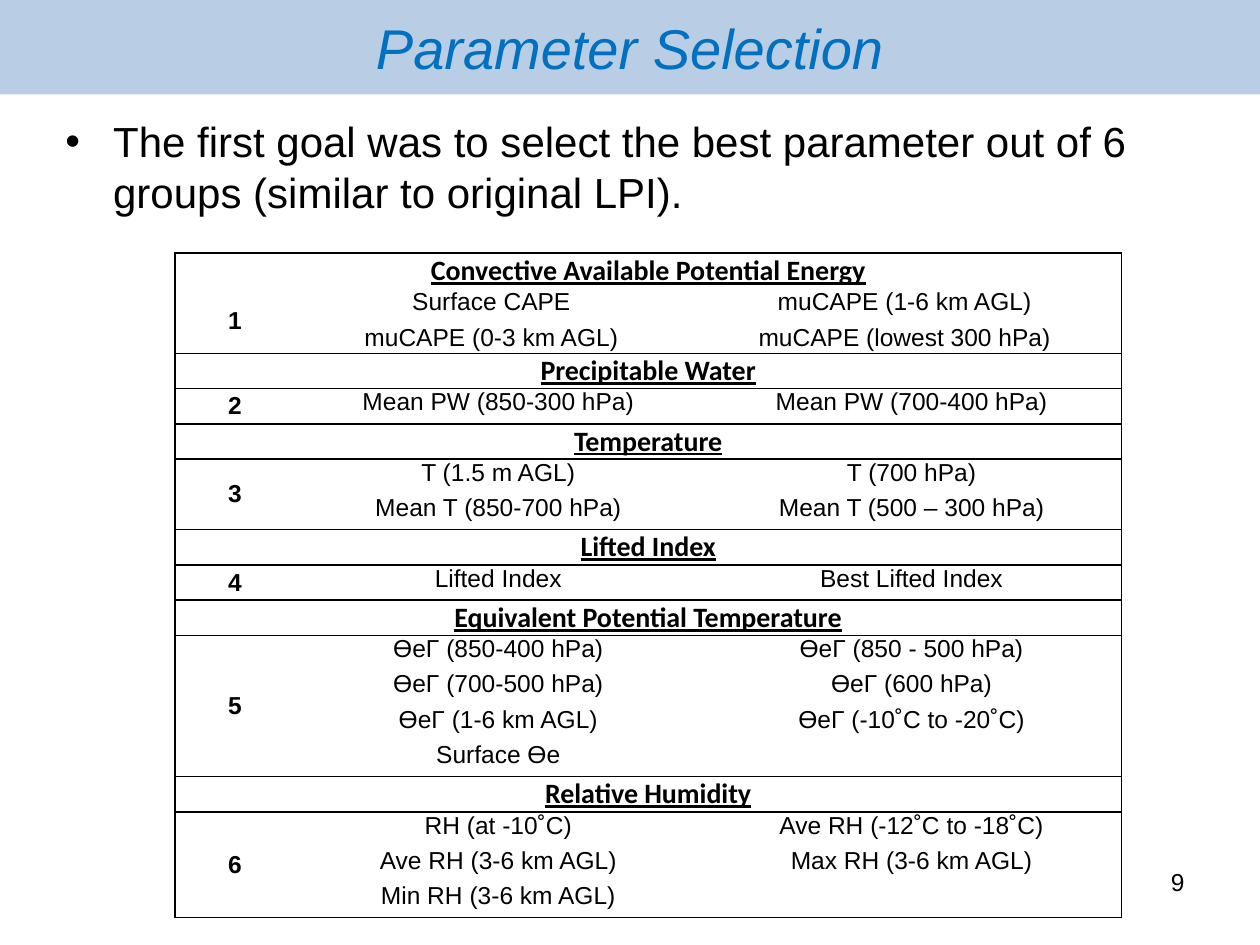
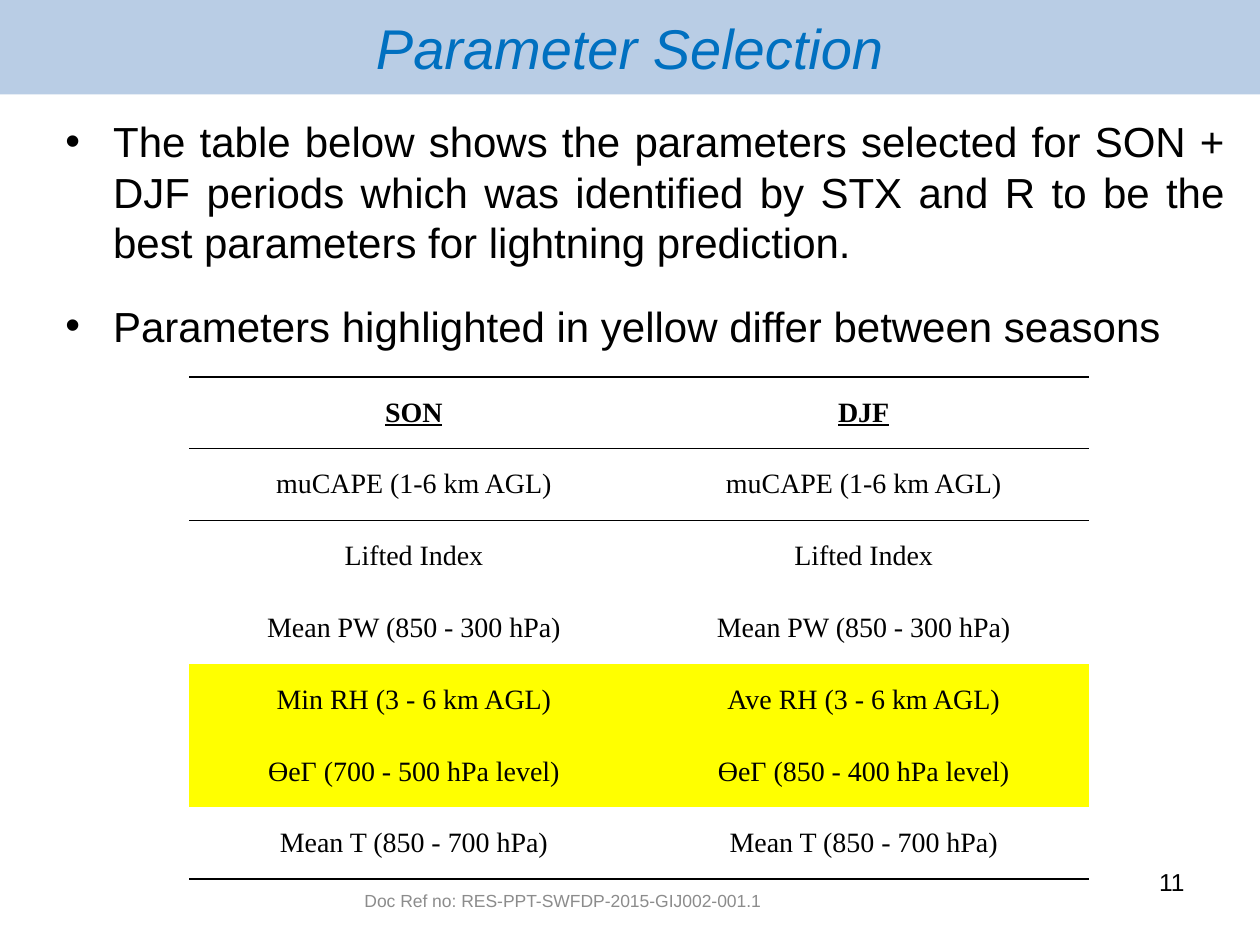
from lxml.etree import SubElement
from pptx import Presentation
from pptx.dml.color import RGBColor as RGB
from pptx.enum.shapes import MSO_SHAPE as SHAPE
from pptx.enum.text import MSO_ANCHOR as ANCHOR, PP_ALIGN as ALIGN
from pptx.oxml.ns import qn
from pptx.util import Inches, Pt

# Content
TITLE = "Parameter Selection"
GOAL = ["The first goal was to select the best parameter out of 6 groups "
        "(similar to original LPI)."]
GROUPS = [
    ("Convective Available Potential Energy", [
        ("Surface CAPE", "muCAPE (1-6 km AGL)"),
        ("muCAPE (0-3 km AGL)", "muCAPE (lowest 300 hPa)")]),
    ("Precipitable Water", [
        ("Mean PW (850-300 hPa)", "Mean PW (700-400 hPa)")]),
    ("Temperature", [
        ("T (1.5 m AGL)", "T (700 hPa)"),
        ("Mean T (850-700 hPa)", "Mean T (500 – 300 hPa)")]),
    ("Lifted Index", [
        ("Lifted Index", "Best Lifted Index")]),
    ("Equivalent Potential Temperature", [
        ("ƟeΓ (850-400 hPa)", "ƟeΓ (850 - 500 hPa)"),
        ("ƟeΓ (700-500 hPa)", "ƟeΓ (600 hPa)"),
        ("ƟeΓ (1-6 km AGL)", "ƟeΓ (-10˚C to -20˚C)"),
        ("Surface Ɵe", "")]),
    ("Relative Humidity", [
        ("RH (at -10˚C)", "Ave RH (-12˚C to -18˚C)"),
        ("Ave RH (3-6 km AGL)", "Max RH (3-6 km AGL)"),
        ("Min RH (3-6 km AGL)", "")]),
]
FINDINGS = [
    "The table below shows the parameters selected for SON + DJF periods which was "
    "identified by STX and R to be the best parameters for lightning prediction.",
    "Parameters highlighted in yellow differ between seasons",
]
SEASONS = [
    ("SON", "DJF"),
    ("muCAPE (1-6 km AGL)", "muCAPE (1-6 km AGL)"),
    ("Lifted Index", "Lifted Index"),
    ("Mean PW (850 - 300 hPa)", "Mean PW (850 - 300 hPa)"),
    ("Min RH (3 - 6 km AGL)", "Ave RH (3 - 6 km AGL)"),
    ("ƟeΓ (700 - 500 hPa level)", "ƟeΓ (850 - 400 hPa level)"),
    ("Mean T (850 - 700 hPa)", "Mean T (850 - 700 hPa)"),
]
DOC_REF = "Doc Ref no: RES-PPT-SWFDP-2015-GIJ002-001.1"

# Shared look
COLORS = {"band": "B9CDE5", "title": "0070C0", "text": "000000",
          "footer": "8C8C8C", "paper": "FFFFFF", "highlight": "FFFF00"}
NO_GRID_STYLE = "{2D5ABB26-0587-4C30-8999-92F81FD0307C}"
WIDTH, HEIGHT = 10, 7.5
BULLET_MARGIN, BULLET_HANG = 0.62, 0.38


def color(name):
    return RGB.from_string(COLORS[name])


def format_runs(paragraph, size, ink="text", font="Arial", align=ALIGN.CENTER,
                bold=False, italic=False, underline=False):
    paragraph.alignment = align
    for run in paragraph.runs:
        face = run.font
        face.name, face.size, face.color.rgb = font, Pt(size), color(ink)
        face.bold, face.italic, face.underline = bold, italic, underline


def add_label(slide, text, box, size, anchor=ANCHOR.TOP, **look):
    label = slide.shapes.add_textbox(*map(Inches, box)).text_frame
    label.word_wrap, label.vertical_anchor = True, anchor
    label.text = text
    format_runs(label.paragraphs[0], size, **look)


def add_bullets(slide, points, align):
    body = slide.shapes.add_textbox(*map(Inches, (0.18, 0.87, 9.64, 6.08))).text_frame
    body.word_wrap = True
    body.text = "\n".join(points)
    for i, point in enumerate(body.paragraphs):
        props = point._p.get_or_add_pPr()
        props.set("marL", str(Inches(BULLET_MARGIN)))
        props.set("indent", str(-Inches(BULLET_HANG)))
        SubElement(props, qn("a:buFont"), typeface="Arial")
        SubElement(props, qn("a:buChar"), char="•")
        if i:
            point.space_before = Pt(19)
        format_runs(point, 24, align=align)


def start_slide(deck, points, number, align=ALIGN.LEFT):
    slide = deck.slides.add_slide(deck.slide_layouts[6])
    band = slide.shapes.add_shape(SHAPE.RECTANGLE, 0, 0, Inches(WIDTH), Inches(HEIGHT / 10))
    band.shadow.inherit = False
    band.fill.solid()
    band.fill.fore_color.rgb = color("band")
    band.line.fill.background()
    band.text_frame.text = TITLE
    band.text_frame.vertical_anchor = ANCHOR.MIDDLE
    format_runs(band.text_frame.paragraphs[0], 32, "title", italic=True)
    add_bullets(slide, points, align)
    add_label(slide, str(number), (7.17, 6.83, 2.33, 0.52), 14, align=ALIGN.RIGHT)
    return slide


# Tables
def add_plain_table(slide, left, top, widths, heights):
    table = slide.shapes.add_table(
        len(heights), len(widths), Inches(left), Inches(top),
        Inches(sum(widths)), Inches(sum(heights))).table
    table.first_row = table.horz_banding = False
    table._tbl.tblPr.find(qn("a:tableStyleId")).text = NO_GRID_STYLE
    for column, width in zip(table.columns, widths):
        column.width = Inches(width)
    for row, height in zip(table.rows, heights):
        row.height = Inches(height)
    return table


def style_cell(cell, edges, size, fill="paper", anchor=ANCHOR.MIDDLE, **look):
    cell.margin_left = cell.margin_right = Inches(0.07)
    cell.margin_top = cell.margin_bottom = 0
    cell.vertical_anchor = anchor
    props = cell._tc.get_or_add_tcPr()
    for side in "LRTB":
        if side in edges:
            line = SubElement(props, qn(f"a:ln{side}"), w=str(Pt(1)))
            ink = SubElement(line, qn("a:solidFill"))
            SubElement(ink, qn("a:srgbClr"), val=COLORS["text"])
    cell.fill.solid()
    cell.fill.fore_color.rgb = color(fill)
    paragraph = cell.text_frame.paragraphs[0]
    format_runs(paragraph, size, **look)
    if not paragraph.runs:  # keeps empty cells from stretching the row
        SubElement(paragraph._p, qn("a:endParaRPr"), sz=str(size * 100))


def add_group_table(slide):
    widths = [0.95, 3.12, 0.11, 3.33]
    heights = [0.28] * sum(1 + len(pairs) for _, pairs in GROUPS)
    heights[2] = 0.23
    table = add_plain_table(slide, 1.39, 2.01, widths, heights)
    last = len(widths)
    starts, row = [], 0
    for number, (heading, pairs) in enumerate(GROUPS, 1):
        starts.append(row)
        table.cell(row, 0).merge(table.cell(row, last - 1))
        table.cell(row, 0).text = heading
        if len(pairs) > 1:
            table.cell(row + 1, 0).merge(table.cell(row + len(pairs), 0))
        table.cell(row + 1, 0).text = str(number)
        # The narrow column joins the right side in the first group only
        right = 2 if number == 1 else 3
        for r, (first, second) in enumerate(pairs, row + 1):
            joined = (2, 3) if number == 1 else (1, 2)
            table.cell(r, joined[0]).merge(table.cell(r, joined[1]))
            table.cell(r, 1).text = first
            table.cell(r, right).text = second
        row += 1 + len(pairs)
    ends = starts[1:] + [row]
    for r in range(row):
        for c in range(last):
            cell = table.cell(r, c)
            edges = [side for side, drawn in (
                ("L", c == 0), ("R", c + cell.span_width == last),
                ("T", r in starts), ("B", r + cell.span_height in ends)) if drawn]
            if r in starts:
                style_cell(cell, edges, 16, font="Calibri", bold=True, underline=True)
            else:
                style_cell(cell, edges, 14, bold=c == 0,
                           anchor=ANCHOR.TOP if c else ANCHOR.MIDDLE)


def add_season_table(slide):
    table = add_plain_table(slide, 1.5, 2.99, [3.57] * 2, [0.57] * len(SEASONS))
    for r, pair in enumerate(SEASONS):
        header = r == 0
        edges = "TB" if header else "T" if r == 1 else "B" if r == len(SEASONS) - 1 else ""
        fill = "paper" if header or pair[0] == pair[1] else "highlight"
        for c, parameter in enumerate(pair):
            table.cell(r, c).text = parameter
            style_cell(table.cell(r, c), edges, 16, fill, font="Times New Roman",
                       bold=header, underline=header)


def main():
    deck = Presentation()
    deck.slide_width, deck.slide_height = Inches(WIDTH), Inches(HEIGHT)

    # Parameter groups
    add_group_table(start_slide(deck, GOAL, 9))

    # Selected parameters by season
    selected = start_slide(deck, FINDINGS, 11, ALIGN.JUSTIFY)
    add_label(selected, DOC_REF, (1.01, 6.95, 6.91, 0.4), 10, ANCHOR.MIDDLE, ink="footer")
    add_season_table(selected)

    deck.save("out.pptx")


if __name__ == "__main__":
    main()
